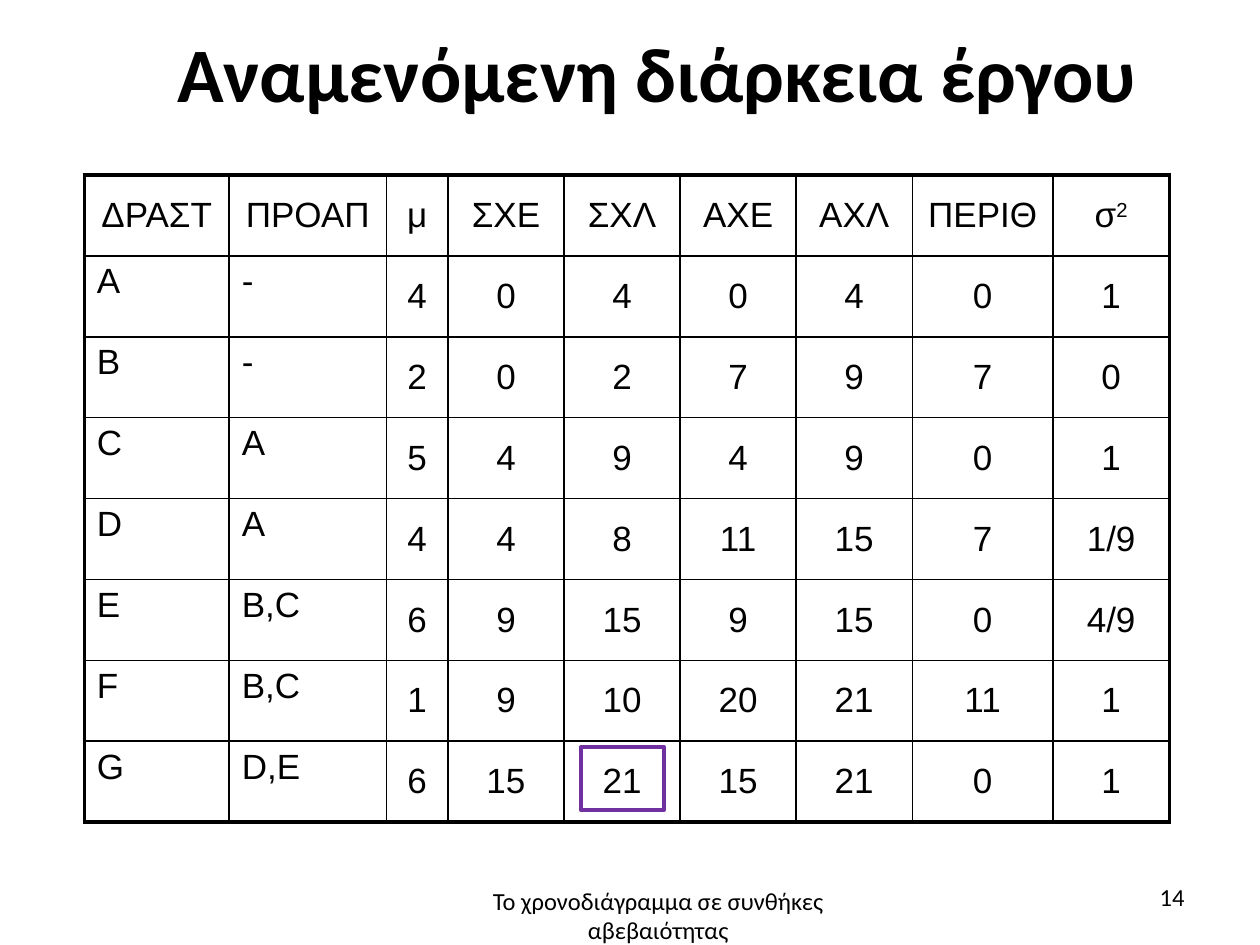
"""Build the slide on expected project duration, with its schedule table."""
from lxml import etree
from pptx import Presentation
from pptx import util as u
from pptx.dml.color import RGBColor
from pptx.enum import shapes, text
from pptx.oxml.ns import qn

COLORS = {"ink": "000000", "highlight": "7030A0"}
TITLE = "Αναμενόμενη διάρκεια έργου"
FOOTER = "Το χρονοδιάγραμμα σε συνθήκες αβεβαιότητας"
PAGE_NUMBER = "14"
HEADERS = ["ΔΡΑΣΤ", "ΠΡΟΑΠ", "μ", "ΣΧΕ", "ΣΧΛ", "ΑΧΕ", "ΑΧΛ", "ΠΕΡΙΘ", "σ"]
ACTIVITIES = [
    ["A", "-", "4", "0", "4", "0", "4", "0", "1"],
    ["B", "-", "2", "0", "2", "7", "9", "7", "0"],
    ["C", "Α", "5", "4", "9", "4", "9", "0", "1"],
    ["D", "Α", "4", "4", "8", "11", "15", "7", "1/9"],
    ["E", "B,C", "6", "9", "15", "9", "15", "0", "4/9"],
    ["F", "B,C", "1", "9", "10", "20", "21", "11", "1"],
    ["G", "D,E", "6", "15", "21", "15", "21", "0", "1"],
]
COLUMN_WIDTHS = [2.92, 3.17, 1.24, 2.34, 2.34, 2.34, 2.34, 2.84, 2.34]
ROW_HEIGHT = 1.63
TABLE_LEFT, TABLE_TOP = 1.7, 3.53
TEXT_COLUMNS = 2
OUTER_LINE, INNER_LINE = 2.25, 1


def color(name):
    return RGBColor.from_string(COLORS[name])


def add_span(para, words, size, font, bold=False):
    span = para.add_run()
    span.text = words
    span.font.size = u.Pt(size)
    span.font.name = font
    span.font.bold = bold
    span.font.color.rgb = color("ink")
    return span


def add_border(cell, side, points):
    line = etree.SubElement(cell._tc.get_or_add_tcPr(), qn(f"a:ln{side}"), w=str(u.Pt(points)))
    fill = etree.SubElement(line, qn("a:solidFill"))
    etree.SubElement(fill, qn("a:srgbClr"), val=COLORS["ink"])


def add_title(page):
    title = page.shapes.title
    title.left, title.top, title.width, title.height = map(u.Cm, (1.3, 0.13, 22.83, 2.59))
    frame = title.text_frame
    frame.margin_left = frame.margin_right = frame.margin_bottom = 0
    frame.margin_top = u.Cm(0.05)
    frame.vertical_anchor = text.MSO_ANCHOR.MIDDLE
    para = frame.paragraphs[0]
    para.alignment = text.PP_ALIGN.CENTER
    para._p.get_or_add_pPr().set("marL", str(u.Cm(1.07)))
    add_span(para, TITLE, 44, "Calibri", bold=True)


def add_schedule(page):
    rows = [HEADERS] + ACTIVITIES
    table = page.shapes.add_table(
        len(rows), len(HEADERS), u.Cm(TABLE_LEFT), u.Cm(TABLE_TOP),
        u.Cm(sum(COLUMN_WIDTHS)), u.Cm(ROW_HEIGHT * len(rows))).table
    table.first_row = table.horz_banding = False
    for column, width in zip(table.columns, COLUMN_WIDTHS):
        column.width = u.Cm(width)
    for r, values in enumerate(rows):
        table.rows[r].height = u.Cm(ROW_HEIGHT)
        for c, value in enumerate(values):
            cell = table.cell(r, c)
            edges = {"L": c == 0, "R": c == len(HEADERS) - 1,
                     "T": r == 0, "B": r == len(rows) - 1}
            for side, outer in edges.items():
                add_border(cell, side, OUTER_LINE if outer else INNER_LINE)
            cell.fill.background()
            para = cell.text_frame.paragraphs[0]
            if r == 0 or c >= TEXT_COLUMNS:
                cell.vertical_anchor = text.MSO_ANCHOR.MIDDLE
                para.alignment = text.PP_ALIGN.CENTER
            add_span(para, value, 20, "Arial")
    variance = table.cell(0, len(HEADERS) - 1).text_frame.paragraphs[0]
    exponent = add_span(variance, "2", 20, "Arial")
    exponent._r.get_or_add_rPr().set("baseline", "30000")


def add_note(page, words, place, alignment):
    box = page.shapes.add_textbox(*map(u.Cm, place))
    box.text_frame.word_wrap = True
    para = box.text_frame.paragraphs[0]
    para.alignment = alignment
    add_span(para, words, 14, "Calibri")


def add_highlight(page):
    frame = page.shapes.add_shape(
        shapes.MSO_SHAPE.RECTANGLE, *map(u.Cm, (11.71, 15.06, 1.68, 1.27)))
    frame.shadow.inherit = False
    frame.fill.background()
    frame.line.color.rgb = color("highlight")
    frame.line.width = u.Pt(2)


def main():
    deck = Presentation()
    deck.slide_width, deck.slide_height = u.Cm(25.4), u.Cm(19.05)
    page = deck.slides.add_slide(deck.slide_layouts.get_by_name("Title Only"))
    add_title(page)
    add_schedule(page)
    add_note(page, FOOTER, (8.84, 17.73, 8.86, 1.4), text.PP_ALIGN.CENTER)
    add_note(page, PAGE_NUMBER, (18.21, 17.65, 5.92, 1.02), text.PP_ALIGN.RIGHT)
    add_highlight(page)
    deck.save("out.pptx")


if __name__ == "__main__":
    main()
